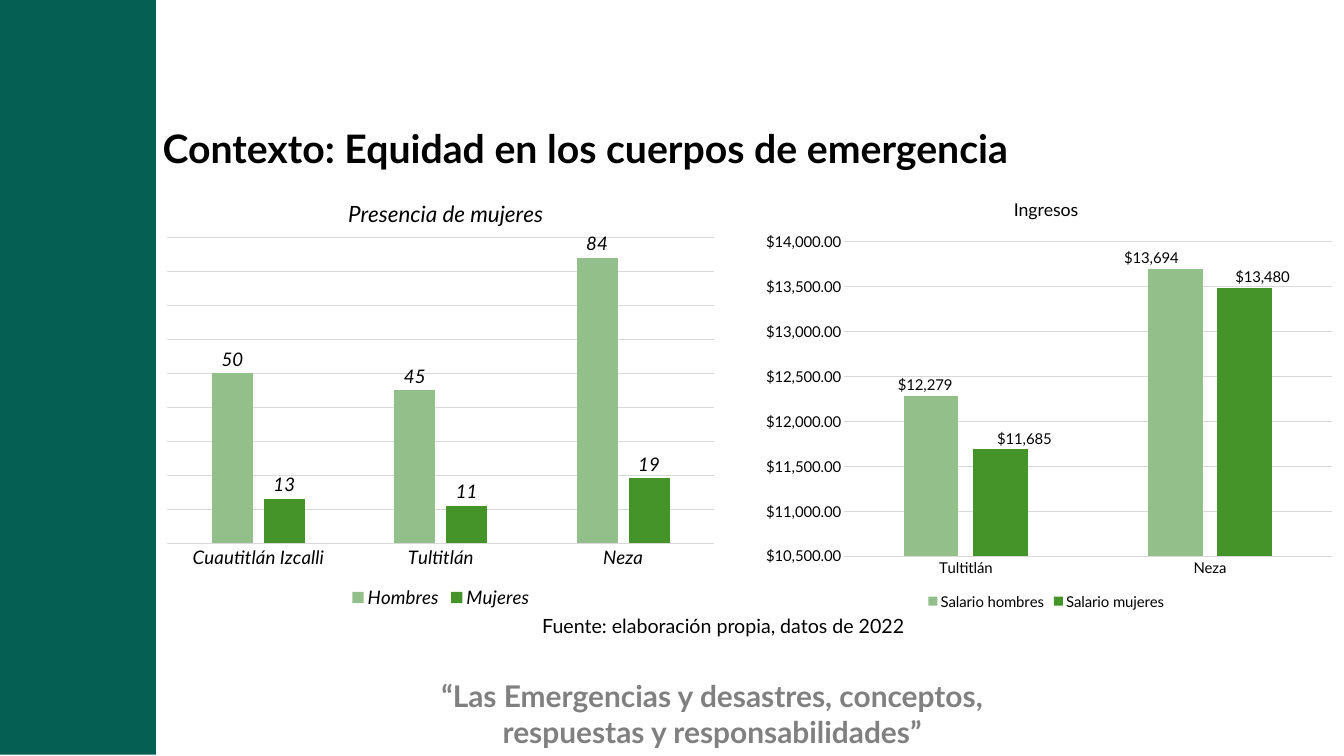
from lxml import etree
from pptx import Presentation
from pptx.chart.data import CategoryChartData
from pptx.dml.color import RGBColor
from pptx.enum.chart import XL_CHART_TYPE, XL_LABEL_POSITION, XL_LEGEND_POSITION, XL_TICK_MARK
from pptx.enum.shapes import MSO_SHAPE
from pptx.enum.text import MSO_ANCHOR, PP_ALIGN
from pptx.oxml.ns import qn
from pptx.util import Pt

PX = 9144
FONT = "Lato"
GRID = "D9D9D9"
COLUMN = XL_CHART_TYPE.COLUMN_CLUSTERED
OUTSIDE = XL_LABEL_POSITION.OUTSIDE_END
BOTTOM = XL_LEGEND_POSITION.BOTTOM
NO_TICK = XL_TICK_MARK.NONE
LEFT, CENTER = PP_ALIGN.LEFT, PP_ALIGN.CENTER
TOP, MIDDLE = MSO_ANCHOR.TOP, MSO_ANCHOR.MIDDLE


def color(value):
    return RGBColor.from_string(value)


def set_layout(parent, index, **settings):
    for old in parent.findall(qn("c:layout")):
        parent.remove(old)
    layout = etree.Element(qn("c:layout"))
    manual = etree.SubElement(layout, qn("c:manualLayout"))
    for name, value in settings.items():
        etree.SubElement(manual, qn(f"c:{name}")).set("val", str(value))
    parent.insert(index, layout)


deck = Presentation()
deck.slide_width, deck.slide_height = 2000 * PX, 1125 * PX
page = deck.slides.add_slide(deck.slide_layouts[6])

band = page.shapes.add_shape(MSO_SHAPE.RECTANGLE, -4 * PX, -2 * PX, 236 * PX, 1125 * PX)
band.shadow.inherit = False
band.fill.solid()
band.fill.fore_color.rgb = color("065F53")
band.line.fill.background()

texts = [
    (612, 1004, 896, 118, 32, "808080", True, CENTER, TOP, 1.0,
     ["“Las Emergencias y desastres, conceptos,", "respuestas y responsabilidades”"]),
    (232, 139, 1631, 172, 42, "000000", True, LEFT, MIDDLE, 0.9,
     ["Contexto: Equidad en los cuerpos de emergencia"]),
    (797, 908, 602, 45, 21, "000000", False, LEFT, TOP, 1.0,
     ["Fuente: elaboración propia, datos de 2022"]),
]
for left, top, width, height, size, ink, bold, align, anchor, spacing, lines in texts:
    box = page.shapes.add_textbox(left * PX, top * PX, width * PX, height * PX)
    frame = box.text_frame
    frame.word_wrap = True
    frame.vertical_anchor = anchor
    for number, line in enumerate(lines):
        para = frame.add_paragraph() if number else frame.paragraphs[0]
        para.alignment = align
        para.line_spacing = spacing
        span = para.add_run()
        span.text = line
        span.font.name = FONT
        span.font.size = Pt(size)
        span.font.bold = bold
        span.font.color.rgb = color(ink)

charts = [
    dict(title="Presencia de mujeres", left=232, width=848, size=20, title_size=24,
         italic=True, format="General", scale=(0, 90, 10), axis=False,
         plot=(0.02, 0.14, 0.96, 0.7), title_at=(0.33, 0.04),
         categories=["Cuautitlán Izcalli", "Tultitlán", "Neza"],
         series=[("Hombres", [50, 45, 84], "93C08A", []),
                 ("Mujeres", [13, 11, 19], "459429", [])]),
    dict(title="Ingresos", left=1114, width=886, size=16, title_size=19,
         italic=False, format='"$"#,##0', scale=(10500, 14000, 500), axis=True,
         plot=(0.16, 0.15, 0.82, 0.72), title_at=(0.44, 0.04),
         categories=["Tultitlán", "Neza"],
         series=[("Salario hombres", [12279, 13694], "93C08A", [-0.01, -0.04]),
                 ("Salario mujeres", [11685, 13480], "459429", [0.04, 0.03])]),
]
for item in charts:
    data = CategoryChartData(number_format=item["format"])
    data.categories = item["categories"]
    for name, values, fill, shifts in item["series"]:
        data.add_series(name, values)
    chart = page.shapes.add_chart(
        COLUMN, item["left"] * PX, 262 * PX, item["width"] * PX, 650 * PX, data).chart

    chart.has_title = True
    title = chart.chart_title
    title.include_in_layout = False
    span = title.text_frame.paragraphs[0].add_run()
    span.text = item["title"]
    chart.has_legend = True
    chart.legend.position = BOTTOM
    chart.legend.include_in_layout = False

    plot = chart.plots[0]
    plot.gap_width = 219
    plot.overlap = -27
    plot.vary_by_categories = False
    fonts = [(chart.font, item["size"]), (chart.legend.font, item["size"]),
             (span.font, item["title_size"])]
    for series, (name, values, fill, shifts) in zip(plot.series, item["series"]):
        series.format.fill.solid()
        series.format.fill.fore_color.rgb = color(fill)
        labels = series.data_labels
        labels.show_value = True
        labels.position = OUTSIDE
        labels.number_format = item["format"]
        labels.number_format_is_linked = False
        fonts.append((labels.font, item["size"]))
        for number, shift in enumerate(shifts):
            label = series.points[number].data_label
            label.position = OUTSIDE
            fonts.append((label.font, item["size"]))
        for element, shift in zip(series.data_labels._element.findall(qn("c:dLbl")), shifts):
            set_layout(element, 1, x=shift, y=0)

    category_axis, value_axis = chart.category_axis, chart.value_axis
    category_axis.format.line.color.rgb = color(GRID)
    category_axis.format.line.width = Pt(0.75)
    value_axis.minimum_scale, value_axis.maximum_scale, value_axis.major_unit = item["scale"]
    value_axis.major_gridlines.format.line.color.rgb = color(GRID)
    value_axis.major_gridlines.format.line.width = Pt(0.75)
    value_axis.format.line.fill.background()
    value_axis.tick_labels.number_format = '"$"#,##0.00'
    value_axis.tick_labels.number_format_is_linked = False
    value_axis.visible = item["axis"]
    for axis in (category_axis, value_axis):
        axis.major_tick_mark = axis.minor_tick_mark = NO_TICK
        fonts.append((axis.tick_labels.font, item["size"]))

    for font, size in fonts:
        font.name = FONT
        font.size = Pt(size)
        font.bold = False
        font.italic = item["italic"]
        font.color.rgb = color("000000")

    x, y, w, h = item["plot"]
    set_layout(chart.element.find(".//" + qn("c:plotArea")), 0, layoutTarget="inner",
               xMode="edge", yMode="edge", x=x, y=y, w=w, h=h)
    x, y = item["title_at"]
    set_layout(chart.element.find(".//" + qn("c:title")), 1,
               xMode="edge", yMode="edge", x=x, y=y)

deck.save("out.pptx")
